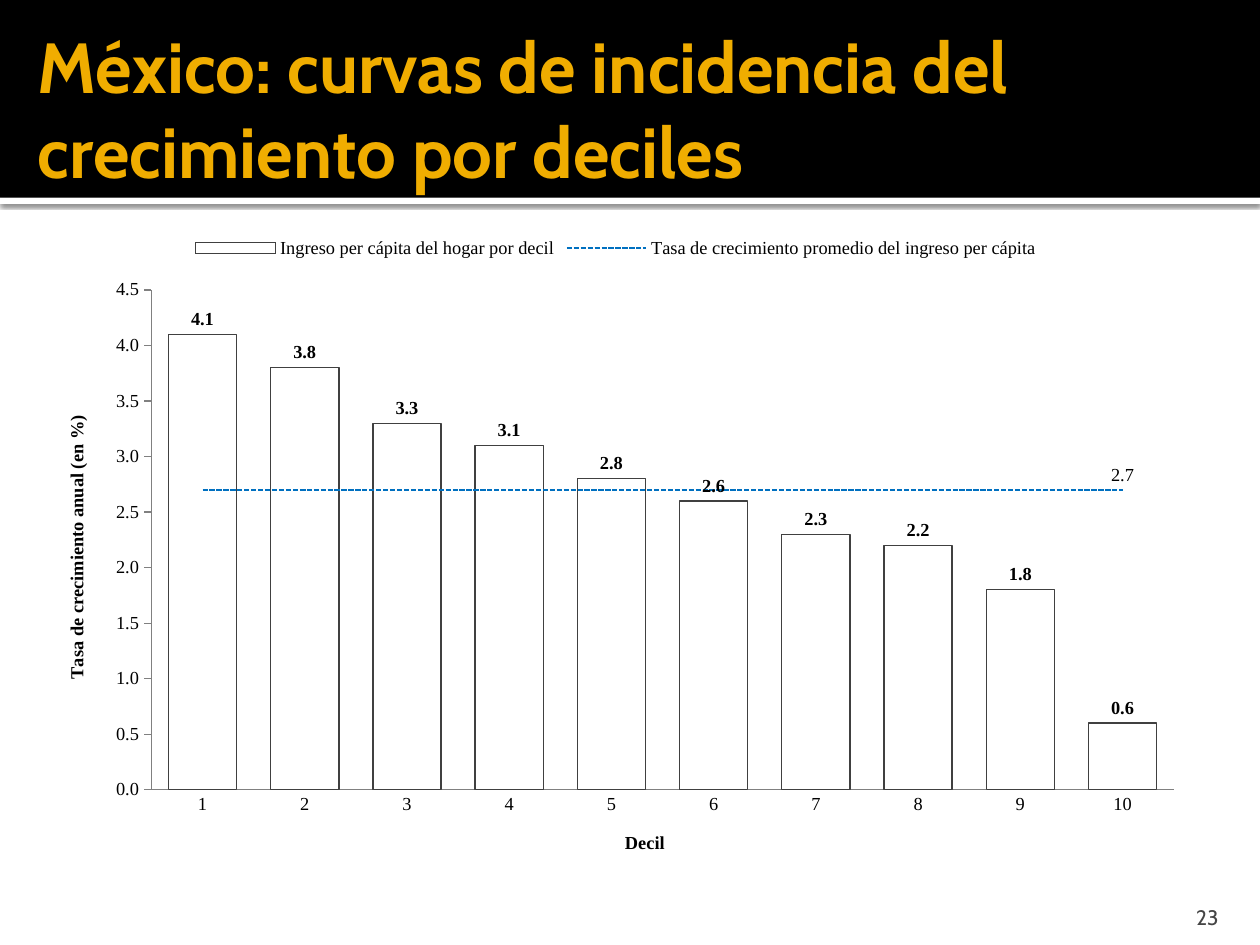
"""Build the slide on growth incidence curves by decile in Mexico."""
from dataclasses import dataclass

from lxml import etree
from pptx import Presentation, oxml
from pptx import util as u
from pptx.chart.axis import CategoryAxis, ValueAxis
from pptx.chart.chart import Chart
from pptx.chart.data import CategoryChartData
from pptx.dml.color import RGBColor
from pptx.enum import chart as charts
from pptx.enum import dml, shapes, text
from pptx.oxml import ns
from pptx.slide import Slide
from pptx.text.text import Font, TextFrame


@dataclass(frozen=True)
class Theme:
    heading_font: str = "Cabin"
    chart_font: str = "Times New Roman"
    heading_size: float = 40.5
    number_size: float = 12
    chart_size: float = 10.5
    gold: str = "F0AD00"
    black: str = "000000"
    white: str = "FFFFFF"
    dark_gray: str = "404040"
    number_gray: str = "454545"
    axis_gray: str = "808080"
    blue: str = "0070C0"


@dataclass(frozen=True)
class Area:
    left: float
    top: float
    width: float
    height: float

    def points(self) -> tuple:
        return tuple(u.Pt(n) for n in (self.left, self.top, self.width, self.height))


@dataclass(frozen=True)
class Band:
    area: Area
    color: str
    shadow: bool = False


THEME = Theme()
BANDS = (
    Band(Area(0, 113, 720, 3.6), THEME.white, shadow=True),
    Band(Area(0, 0, 720, 113), THEME.black),
)
TITLE_AREA = Area(14.4, 12.24, 705.6, 98.64)
NUMBER_AREA = Area(645.84, 509.76, 57.6, 21.6)
CHART_AREA = Area(20.16, 128.16, 663.84, 375.84)
PLOT_SHARES = {"x": 0.1, "y": 0.1, "w": 0.88, "h": 0.76}
DECILE_RATES = (4.1, 3.8, 3.3, 3.1, 2.8, 2.6, 2.3, 2.2, 1.8, 0.6)
MEAN_RATE = 2.7
RATE_FORMAT = "#,##0.0"


def style_font(font: Font, *, name: str, size: float, color: str, bold: bool) -> None:
    font.name, font.size, font.bold = name, u.Pt(size), bold
    font.color.rgb = RGBColor.from_string(color)


def write(frame: TextFrame, content: str, *, size: float, name: str, color: str,
          bold: bool = False, align: text.PP_ALIGN = text.PP_ALIGN.LEFT) -> None:
    para = frame.paragraphs[0]
    para.alignment = align
    span = para.add_run()
    span.text = content
    style_font(span.font, name=name, size=size, color=color, bold=bold)


def set_frame(frame: TextFrame, anchor: text.MSO_ANCHOR, margins: tuple) -> None:
    frame.word_wrap = True
    frame.auto_size = text.MSO_AUTO_SIZE.NONE
    frame.vertical_anchor = anchor
    (frame.margin_left, frame.margin_top,
     frame.margin_right, frame.margin_bottom) = (u.Pt(n) for n in margins)


def add_band(page: Slide, band: Band) -> None:
    box = page.shapes.add_shape(shapes.MSO_SHAPE.RECTANGLE, *band.area.points())
    box.shadow.inherit = False
    box.fill.solid()
    box.fill.fore_color.rgb = RGBColor.from_string(band.color)
    box.line.fill.background()
    if band.shadow:
        effects = box._element.spPr.find(ns.qn("a:effectLst"))
        effects.append(oxml.parse_xml(
            f'<a:outerShdw {ns.nsdecls("a")} blurRad="{u.Pt(2.5)}" dist="{u.Pt(0.8)}" '
            f'dir="5400000" rotWithShape="0"><a:srgbClr val="{THEME.black}">'
            '<a:alpha val="60000"/></a:srgbClr></a:outerShdw>'))


def add_title(page: Slide) -> None:
    title = page.shapes.title
    title.left, title.top, title.width, title.height = TITLE_AREA.points()
    set_frame(title.text_frame, text.MSO_ANCHOR.MIDDLE, (7.2, 3.6, 3.6, 3.6))
    write(title.text_frame, "México: curvas de incidencia del crecimiento por deciles",
          size=THEME.heading_size, name=THEME.heading_font, color=THEME.gold, bold=True)
    title._element.getparent().append(title._element)


def add_page_number(page: Slide) -> None:
    box = page.shapes.add_textbox(*NUMBER_AREA.points())
    set_frame(box.text_frame, text.MSO_ANCHOR.BOTTOM, (7.2, 3.6, 7.2, 0))
    write(box.text_frame, "23", size=THEME.number_size, name=THEME.heading_font,
          color=THEME.number_gray, align=text.PP_ALIGN.RIGHT)


def style_axis(axis: CategoryAxis | ValueAxis, caption: str,
               tick: charts.XL_TICK_MARK) -> None:
    axis.has_major_gridlines = False
    axis.major_tick_mark = tick
    axis.minor_tick_mark = charts.XL_TICK_MARK.NONE
    axis.format.line.color.rgb = RGBColor.from_string(THEME.axis_gray)
    axis.format.line.width = u.Pt(0.75)
    write(axis.axis_title.text_frame, caption, size=THEME.chart_size,
          name=THEME.chart_font, color=THEME.black, bold=True,
          align=text.PP_ALIGN.CENTER)


def move_last_series_to_line(chart: Chart) -> None:
    bars = chart.plots[0]._element
    series = bars.findall(ns.qn("c:ser"))[-1]
    for flag in series.findall(ns.qn("c:invertIfNegative")):
        series.remove(flag)
    lines = oxml.parse_xml(
        f'<c:lineChart {ns.nsdecls("c")}><c:grouping val="standard"/>'
        '<c:varyColors val="0"/><c:marker val="1"/></c:lineChart>')
    lines.insert(2, series)
    for axis in bars.findall(ns.qn("c:axId")):
        etree.SubElement(lines, ns.qn("c:axId")).set("val", axis.get("val"))
    bars.addnext(lines)


def set_plot_layout(chart: Chart) -> None:
    area = chart._chartSpace.find(f'{ns.qn("c:chart")}/{ns.qn("c:plotArea")}')
    for old in area.findall(ns.qn("c:layout")):
        area.remove(old)
    modes = '<c:layoutTarget val="inner"/><c:xMode val="edge"/><c:yMode val="edge"/>'
    shares = "".join(f'<c:{key} val="{n}"/>' for key, n in PLOT_SHARES.items())
    area.insert(0, oxml.parse_xml(
        f'<c:layout {ns.nsdecls("c")}><c:manualLayout>{modes}{shares}'
        '</c:manualLayout></c:layout>'))


def add_rate_chart(page: Slide) -> None:
    rates = CategoryChartData(number_format=RATE_FORMAT)
    rates.categories = [str(n) for n in range(1, len(DECILE_RATES) + 1)]
    rates.add_series("Ingreso per cápita del hogar por decil", DECILE_RATES)
    rates.add_series("Tasa de crecimiento promedio del ingreso per cápita",
                     [MEAN_RATE] * len(DECILE_RATES))
    chart = page.shapes.add_chart(charts.XL_CHART_TYPE.COLUMN_CLUSTERED,
                                  *CHART_AREA.points(), rates).chart
    move_last_series_to_line(chart)
    set_plot_layout(chart)
    plain = dict(name=THEME.chart_font, size=THEME.chart_size, color=THEME.black)
    style_font(chart.font, bold=False, **plain)
    chart.has_title = False
    chart.has_legend = True
    chart.legend.position = charts.XL_LEGEND_POSITION.TOP
    chart.legend.include_in_layout = False

    style_axis(chart.category_axis, "Decil", charts.XL_TICK_MARK.NONE)
    style_axis(chart.value_axis, "Tasa de crecimiento anual (en %)",
               charts.XL_TICK_MARK.OUTSIDE)
    axis = chart.value_axis
    axis.minimum_scale, axis.maximum_scale, axis.major_unit = 0, 4.5, 0.5
    axis.tick_labels.number_format = RATE_FORMAT
    axis.tick_labels.number_format_is_linked = False

    bars, lines = chart.plots
    bars.gap_width, bars.vary_by_categories = 50, False
    columns, mean = bars.series[0], lines.series[0]
    columns.format.fill.solid()
    columns.format.fill.fore_color.rgb = RGBColor.from_string(THEME.white)
    for series, color, width in ((columns, THEME.dark_gray, 0.75), (mean, THEME.blue, 1)):
        series.format.line.color.rgb = RGBColor.from_string(color)
        series.format.line.width = u.Pt(width)
        series.data_labels.number_format = RATE_FORMAT
        series.data_labels.number_format_is_linked = False
        series.data_labels.show_value = series is columns
    columns.data_labels.position = charts.XL_LABEL_POSITION.OUTSIDE_END
    style_font(columns.data_labels.font, bold=True, **plain)
    mean.format.line.dash_style = dml.MSO_LINE.SQUARE_DOT
    mean.marker.style = charts.XL_MARKER_STYLE.NONE
    mean.smooth = False
    last_label = mean.points[len(DECILE_RATES) - 1].data_label
    style_font(last_label.font, bold=False, **plain)
    last_label.position = charts.XL_LABEL_POSITION.ABOVE


def main() -> None:
    deck = Presentation()
    deck.slide_width, deck.slide_height = u.Pt(720), u.Pt(540)
    page = deck.slides.add_slide(deck.slide_layouts.get_by_name("Title Only"))
    for band in BANDS:
        add_band(page, band)
    add_title(page)
    add_page_number(page)
    add_rate_chart(page)
    deck.save("out.pptx")


if __name__ == "__main__":
    main()
